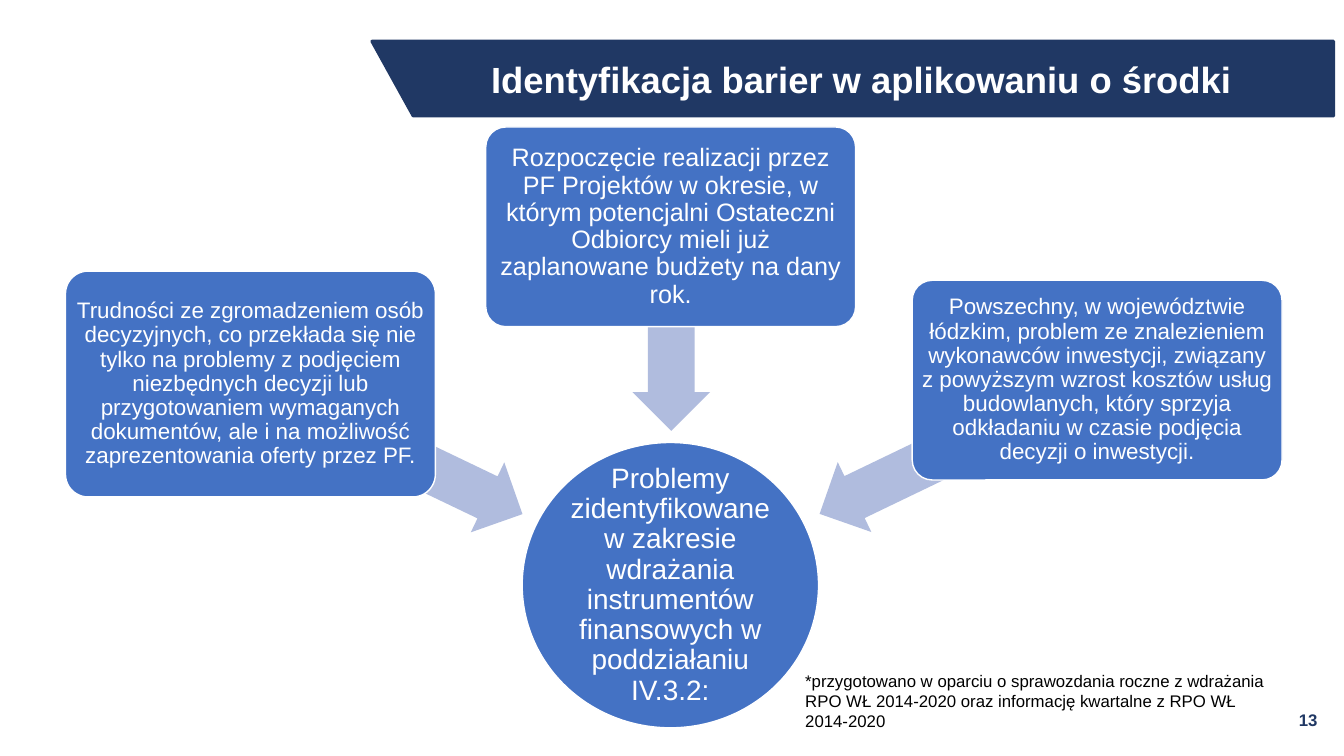
from pptx import Presentation
from pptx.dml.color import RGBColor
from pptx.enum.shapes import MSO_SHAPE
from pptx.enum.text import MSO_ANCHOR, MSO_AUTO_SIZE, PP_ALIGN
from pptx.util import Pt

NAVY = RGBColor(0x20, 0x38, 0x64)
BLUE = RGBColor(0x44, 0x72, 0xC4)
LAVENDER = RGBColor(0xB0, 0xBC, 0xDE)
WHITE = RGBColor(0xFF, 0xFF, 0xFF)
BLACK = RGBColor(0, 0, 0)

CARD_WIDTH = 264.2
ARROW_HEIGHT = 55.4

CARDS = [
    (46.8, 193.7, 161.3, 16, 2.2,
     "Trudności ze zgromadzeniem osób decyzyjnych, co przekłada się nie tylko na "
     "problemy z podjęciem niezbędnych decyzji lub przygotowaniem wymaganych "
     "dokumentów, ale i na możliwość zaprezentowania oferty przez PF."),
    (347, 90.7, 142.6, 18, 2.7,
     "Rozpoczęcie realizacji przez PF Projektów w okresie, w którym potencjalni "
     "Ostateczni Odbiorcy mieli już zaplanowane budżety na dany rok."),
    (651.6, 200.2, 142.6, 16, 2.2,
     "Powszechny, w województwie łódzkim, problem ze znalezieniem wykonawców "
     "inwestycji, związany z powyższym wzrost kosztów usług budowlanych, który "
     "sprzyja odkładaniu w czasie podjęcia decyzji o inwestycji."),
]
ARROWS = [(168.5, 293, 215.3, 205.6), (406.8, 207.4, 145.4, 270), (574.6, 291.6, 220.3, 334.3)]


class SlideBuilder:
    """Draws styled elements on one slide, with lengths in points."""

    font = "Arial"

    def __init__(self, prs):
        self.s = prs.slides.add_slide(prs.slide_layouts[5])

    def set_text(self, sp, text, size, color, align=PP_ALIGN.CENTER, bold=False, spacing=1.0):
        tf = sp.text_frame
        tf.text = text
        tf.word_wrap = True
        tf.auto_size = MSO_AUTO_SIZE.NONE
        tf.vertical_anchor = MSO_ANCHOR.MIDDLE
        p = tf.paragraphs[0]
        p.alignment = align
        p.line_spacing = spacing
        p.font.name = self.font
        p.font.size = Pt(size)
        p.font.bold = bold
        p.font.color.rgb = color

    def paint(self, sp, fill, line=None, width=1):
        sp.shadow.inherit = False
        sp.fill.solid()
        sp.fill.fore_color.rgb = fill
        if line is None:
            sp.line.fill.background()
        else:
            sp.line.color.rgb = line
            sp.line.width = Pt(width)

    def banner(self, points):
        corners = [(Pt(x), Pt(y)) for x, y in points]
        outline = self.s.shapes.build_freeform(*corners[0])
        outline.add_line_segments(corners[1:], close=True)
        self.paint(outline.convert_to_shape(), NAVY, NAVY, 2.25)

    def title(self, text, x, y, w, h):
        sp = self.s.shapes.title
        sp.left, sp.top, sp.width, sp.height = Pt(x), Pt(y), Pt(w), Pt(h)
        self.set_text(sp, text, 26, WHITE, bold=True)
        self.s.shapes._spTree.append(sp._element)

    def shape(self, kind, x, y, w, h, fill, line=None):
        sp = self.s.shapes.add_shape(kind, Pt(x), Pt(y), Pt(w), Pt(h))
        self.paint(sp, fill, line)
        return sp

    def label_shape(self, kind, x, y, w, h, text, size, inset):
        sp = self.shape(kind, x, y, w, h, BLUE, WHITE)
        tf = sp.text_frame
        tf.margin_left = tf.margin_right = tf.margin_top = tf.margin_bottom = Pt(inset)
        self.set_text(sp, text, size, WHITE, spacing=0.9)
        return sp

    def card(self, x, y, h, size, inset, text):
        sp = self.label_shape(MSO_SHAPE.ROUNDED_RECTANGLE, x, y, CARD_WIDTH, h, text, size, inset)
        sp.adjustments[0] = 0.1

    def arrow(self, x, y, w, rotation):
        sp = self.shape(MSO_SHAPE.LEFT_ARROW, x, y, w, ARROW_HEIGHT, LAVENDER)
        sp.adjustments[0] = 0.6
        sp.adjustments[1] = 0.5
        sp.rotation = rotation

    def text(self, text, x, y, w, h, color, align, bold=False):
        sp = self.s.shapes.add_textbox(Pt(x), Pt(y), Pt(w), Pt(h))
        self.set_text(sp, text, 12, color, align, bold)


def main():
    prs = Presentation()
    prs.slide_width, prs.slide_height = Pt(960), Pt(540)
    slide = SlideBuilder(prs)
    slide.banner([(265.7, 29.5), (952.6, 29.5), (952.6, 82.8), (295.2, 82.8)])
    slide.title("Identyfikacja barier w aplikowaniu o środki", 285.1, 36.7, 661, 38.9)
    slide.label_shape(
        MSO_SHAPE.OVAL, 373, 316.1, 211.7, 203.8,
        "Problemy zidentyfikowane w zakresie wdrażania instrumentów finansowych "
        "w poddziałaniu IV.3.2:", 20, 0.9)
    for arrow, card in zip(ARROWS, CARDS):
        slide.arrow(*arrow)
        slide.card(*card)
    slide.text(
        "*przygotowano w oparciu o sprawozdania roczne z wdrażania RPO WŁ 2014-2020 "
        "oraz informację kwartalne z RPO WŁ 2014-2020",
        568.1, 475.2, 348.5, 51.1, BLACK, PP_ALIGN.LEFT)
    slide.text("13", 732.2, 499.7, 216, 28.8, NAVY, PP_ALIGN.RIGHT, bold=True)
    prs.save("out.pptx")


if __name__ == "__main__":
    main()
